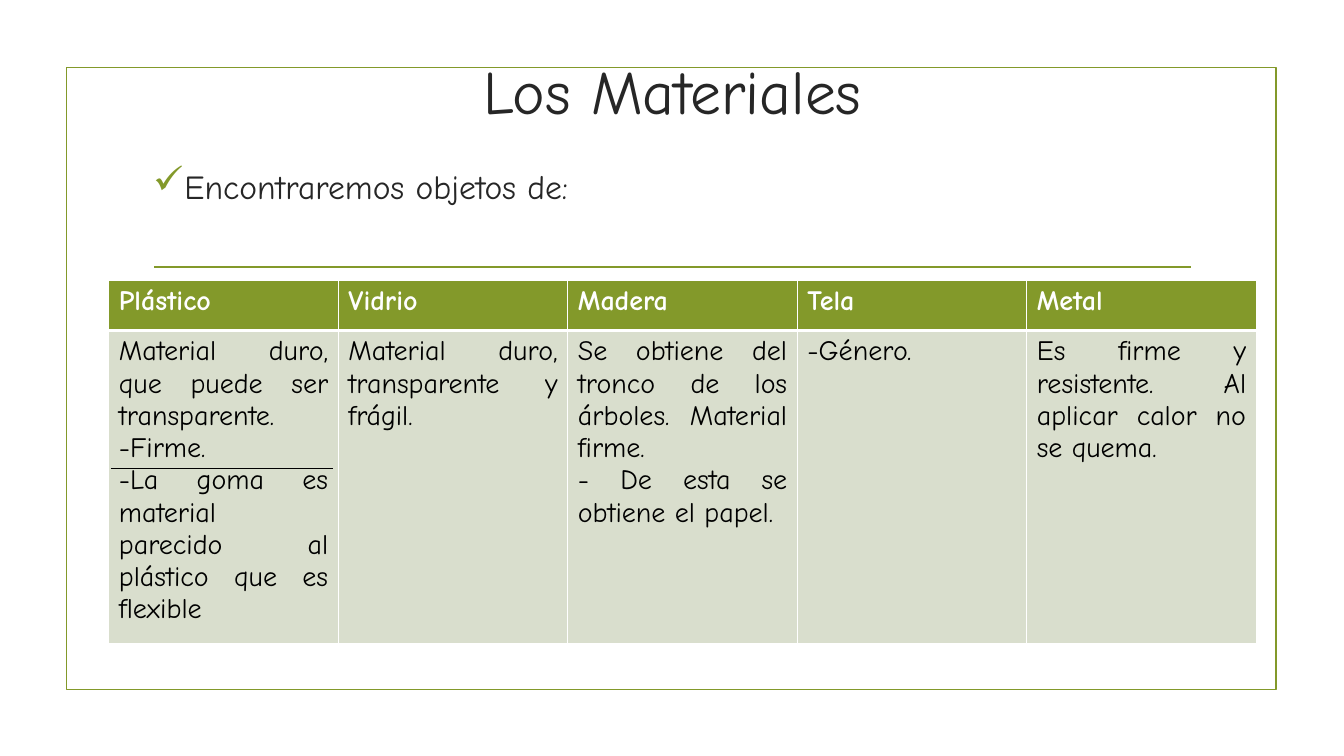
"""Build the slide "Los Materiales" with its table of materials."""
from lxml import etree
from pptx import Presentation
from pptx.dml.color import RGBColor
from pptx.enum.shapes import MSO_CONNECTOR, MSO_SHAPE
from pptx.enum.text import MSO_ANCHOR, MSO_AUTO_SIZE, PP_ALIGN
from pptx.oxml import parse_xml
from pptx.oxml.ns import qn
from pptx.util import Pt

PX = 9144
FONT = "Comic Neue"
GREEN = RGBColor(0x83, 0x99, 0x2A)
PALE = RGBColor(0xD9, 0xDE, 0xCD)
DARK = RGBColor(0x26, 0x26, 0x26)
BLACK = RGBColor(0, 0, 0)
WHITE = RGBColor(255, 255, 255)
RECT, LINE = MSO_SHAPE.RECTANGLE, MSO_CONNECTOR.STRAIGHT
MIDDLE, TOP = MSO_ANCHOR.MIDDLE, MSO_ANCHOR.TOP
CENTER, JUSTIFY = PP_ALIGN.CENTER, PP_ALIGN.JUSTIFY
FIXED = MSO_AUTO_SIZE.NONE
NS = 'xmlns:a="http://schemas.openxmlformats.org/drawingml/2006/main"'

MATTER = {
    "Plástico": "Material duro, que puede ser transparente.\n-Firme.\n"
                "-La goma es material parecido al plástico que es flexible",
    "Vidrio": "Material duro, transparente y frágil.",
    "Madera": "Se obtiene del tronco de los árboles. Material firme.\n"
              "- De esta se obtiene el papel.",
    "Tela": "-Género.",
    "Metal": "Es firme y resistente. Al aplicar calor no se quema.",
}


def style(frame, size, color, align, bold=False):
    """Format every paragraph of a text frame."""
    for para in frame.paragraphs:
        para.alignment = align
        for run in para.runs:
            run.font.name = FONT
            run.font.size = Pt(size)
            run.font.bold = bold
            run.font.color.rgb = color


def rule(left, right, y, color, width):
    """Draw a level line."""
    line = slide.shapes.add_connector(LINE, left * PX, y * PX, right * PX, y * PX)
    line.line.color.rgb = color
    line.line.width = Pt(width)
    etree.SubElement(line._element.spPr, qn("a:effectLst"))


deck = Presentation()
deck.slide_width, deck.slide_height = 1333 * PX, 750 * PX
slide = deck.slides.add_slide(deck.slide_layouts[5])

title = slide.shapes.title
title.left, title.top, title.width, title.height = 142 * PX, 18 * PX, 1050 * PX, 143 * PX
title.text_frame.text = "Los Materiales"
title.text_frame.auto_size = FIXED
title.text_frame.vertical_anchor = MIDDLE
style(title.text_frame, 44, DARK, CENTER)

frame = slide.shapes.add_shape(RECT, 66 * PX, 67 * PX, 1200 * PX, 617 * PX)
frame.shadow.inherit = False
frame.fill.background()
frame.line.color.rgb = GREEN
frame.line.width = Pt(1.25)
rule(153, 1181, 265, GREEN, 1.25)

body = slide.shapes.add_textbox(142 * PX, 160 * PX, 1050 * PX, 363 * PX).text_frame
body.word_wrap = True
body.vertical_anchor = TOP
body.text = "Encontraremos objetos de:"
props = body.paragraphs[0]._p.get_or_add_pPr()
props.set("marL", str(31 * PX))
props.set("indent", str(-31 * PX))
for mark in (f'<a:buClr {NS}><a:srgbClr val="{GREEN}"/></a:buClr>',
             f'<a:buSzPct {NS} val="115000"/>',
             f'<a:buChar {NS} char="✓"/>'):
    props.append(parse_xml(mark))
body.paragraphs[0].space_after = Pt(6)
style(body, 24, DARK, JUSTIFY)

table = slide.shapes.add_table(
    2, len(MATTER), 108 * PX, 278 * PX, 1138 * PX, 347 * PX).table
table.rows[0].height, table.rows[1].height = 50 * PX, 297 * PX
looks = ((GREEN, WHITE, True), (PALE, BLACK, False))
for col, pair in enumerate(MATTER.items()):
    for row, text in enumerate(pair):
        fill, ink, bold = looks[row]
        cell = table.cell(row, col)
        cell.text_frame.text = text
        style(cell.text_frame, 20, ink, JUSTIFY, bold)
        edges = {"L": 1, "R": 1, "T": 1 if row == 0 else 3, "B": 3 if row == 0 else 1}
        for side, width in edges.items():
            cell._tc.get_or_add_tcPr().append(parse_xml(
                f'<a:ln{side} {NS} w="{Pt(width)}"><a:solidFill>'
                f'<a:srgbClr val="{WHITE}"/></a:solidFill></a:ln{side}>'))
        cell.fill.solid()
        cell.fill.fore_color.rgb = fill

rule(110, 330, 465, BLACK, 0.75)
deck.save("out.pptx")
